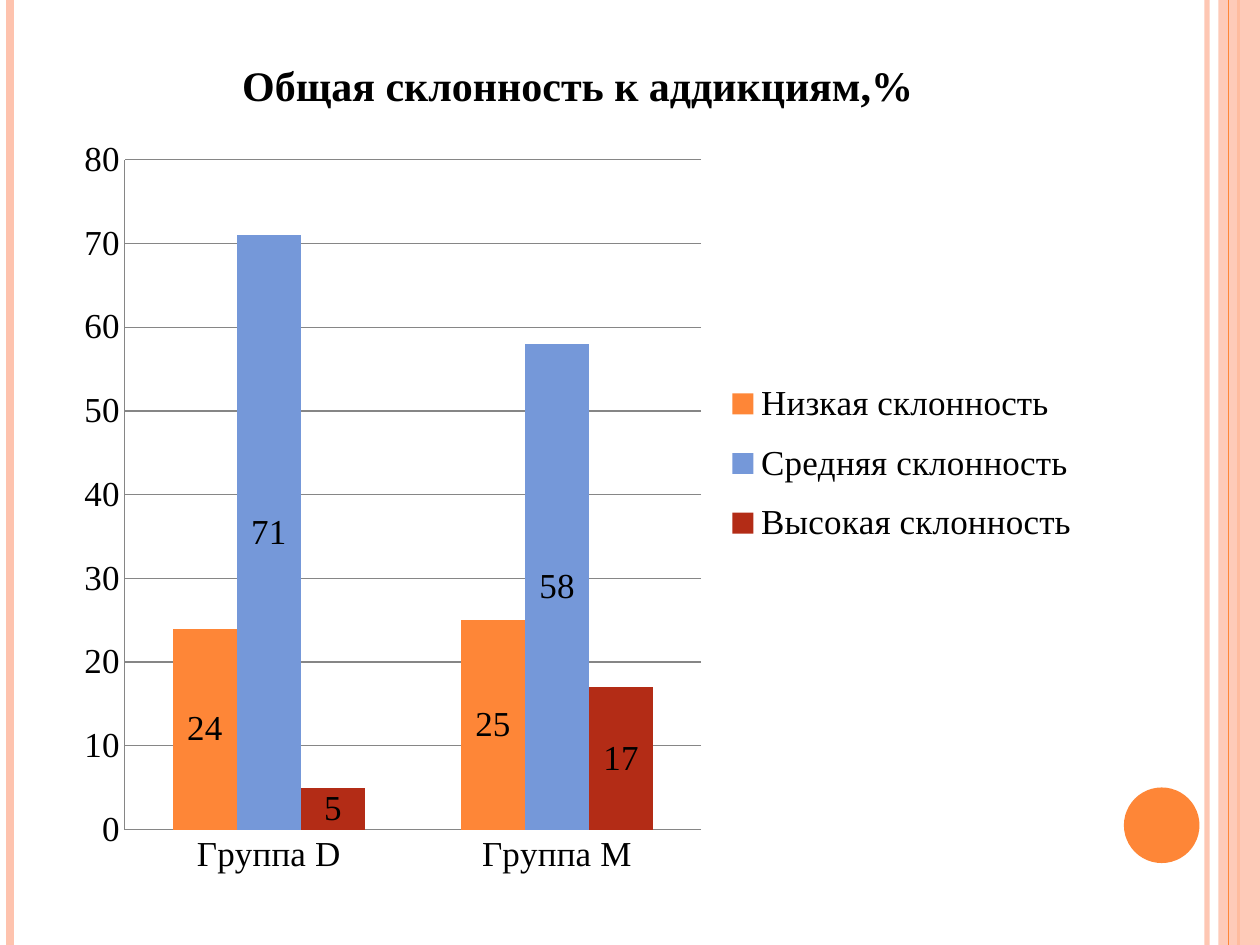
import pptx
import pptx.chart.data
import pptx.dml.color
import pptx.enum.chart
import pptx.enum.shapes
import pptx.oxml
import pptx.oxml.ns
import pptx.util
from pptx.util import Inches, Pt

FONT = "Times New Roman"
COLORS = {
    "orange": "FE8637",
    "peach": "FEC3AE",
    "blue": "7598D9",
    "red": "B32C16",
    "text": "000000",
    "grid": "868686",
}
TITLE = "Общая склонность к аддикциям,%"
GROUPS = ["Группа D", "Группа M"]
LEVELS = [
    ("Низкая склонность", (24, 25), "orange"),
    ("Средняя склонность", (71, 58), "blue"),
    ("Высокая склонность", (5, 17), "red"),
]
# x, colour, width in points, opacity in percent
STRIPES_BEHIND = [(9.58, "peach", 3, 93), (0.08, "peach", 4.5, 100), (9.83, "orange", 1.5, 100)]
STRIPES_FRONT = [(9.75, "orange", 0.75, 100)]
# left, top, width, height as fractions of the chart
PLOT_BOX = (0.06, 0.154, 0.56, 0.774)
LEGEND_BOX = (0.64, 0.39, 0.35, 0.23)


def rgb(name):
    return pptx.dml.color.RGBColor.from_string(COLORS[name])


def set_opacity(element, percent):
    for color in element.iter(pptx.oxml.ns.qn("a:srgbClr")):
        alpha = pptx.oxml.parse_xml(
            f'<a:alpha {pptx.oxml.ns.nsdecls("a")} val="{percent * 1000}"/>')
        color.append(alpha)


def add_stripe(slide, x, color, width, opacity):
    stripe = slide.shapes.add_connector(
        pptx.enum.shapes.MSO_CONNECTOR.STRAIGHT, Inches(x), 0, Inches(x), Inches(7.5))
    stripe.line.color.rgb = rgb(color)
    stripe.line.width = Pt(width)
    properties = stripe._element.spPr
    if opacity < 100:
        set_opacity(properties, opacity)
    properties.append(pptx.oxml.parse_xml(f'<a:effectLst {pptx.oxml.ns.nsdecls("a")}/>'))


def add_plain_shape(slide, kind, box, color, opacity=100):
    shape = slide.shapes.add_shape(kind, *map(Inches, box))
    shape.shadow.inherit = False
    shape.fill.solid()
    shape.fill.fore_color.rgb = rgb(color)
    shape.line.fill.background()
    if opacity < 100:
        set_opacity(shape._element.spPr, opacity)


def format_font(font, size, bold=False, color="text"):
    font.name = FONT
    font.size = Pt(size)
    font.bold = bold
    font.color.rgb = rgb(color)


def write_text(frame, text, **style):
    frame.text = text
    format_font(frame.paragraphs[0].runs[0].font, **style)


def make_layout(box, inner=False):
    """Return a manual chart layout for a box in fractions of the chart."""
    target = '<c:layoutTarget val="inner"/>' if inner else ""
    modes = "".join(f'<c:{side}Mode val="edge"/>' for side in "xy")
    sizes = "".join(f'<c:{side} val="{value}"/>' for side, value in zip("xywh", box))
    return pptx.oxml.parse_xml(
        f'<c:layout {pptx.oxml.ns.nsdecls("c")}><c:manualLayout>'
        f"{target}{modes}{sizes}</c:manualLayout></c:layout>")


def place_part(part, layout, index):
    for old in part.findall(pptx.oxml.ns.qn("c:layout")):
        part.remove(old)
    part.insert(index, layout)


def add_addiction_chart(slide):
    data = pptx.chart.data.CategoryChartData()
    data.categories = GROUPS
    for name, values, _ in LEVELS:
        data.add_series(name, values)
    chart = slide.shapes.add_chart(
        pptx.enum.chart.XL_CHART_TYPE.COLUMN_CLUSTERED,
        Inches(0.5), Inches(0.21), Inches(8.17), Inches(6.87), data).chart
    format_font(chart.font, size=20)
    chart.has_title = True
    write_text(chart.chart_title.text_frame, TITLE, size=24, bold=True)
    chart.chart_title.include_in_layout = False

    chart.has_legend = True
    chart.legend.position = pptx.enum.chart.XL_LEGEND_POSITION.RIGHT
    chart.legend.include_in_layout = False

    chart.value_axis.minimum_scale = 0
    chart.value_axis.maximum_scale = 80
    chart.value_axis.major_unit = 10
    chart.value_axis.has_major_gridlines = True
    for axis in (chart.category_axis, chart.value_axis):
        axis.major_tick_mark = pptx.enum.chart.XL_TICK_MARK.NONE
        axis.format.line.color.rgb = rgb("grid")
    gridlines = chart.value_axis.major_gridlines.format.line
    gridlines.color.rgb = rgb("grid")
    gridlines.width = Pt(0.75)

    plot = chart.plots[0]
    plot.gap_width = 150
    plot.overlap = 0
    plot.vary_by_categories = False
    for series, (_, _, color) in zip(plot.series, LEVELS):
        series.format.fill.solid()
        series.format.fill.fore_color.rgb = rgb(color)
        labels = series.data_labels
        labels.show_value = True
        labels.position = pptx.enum.chart.XL_LABEL_POSITION.CENTER
        format_font(labels.font, size=20)

    plot_area = chart._chartSpace.chart.plotArea
    place_part(plot_area, make_layout(PLOT_BOX, inner=True), 0)
    place_part(chart.legend._element, make_layout(LEGEND_BOX), 1)


def main():
    deck = pptx.Presentation()
    deck.slide_width, deck.slide_height = Inches(10), Inches(7.5)
    slide = deck.slides.add_slide(deck.slide_layouts[6])
    shapes = pptx.enum.shapes.MSO_SHAPE
    for stripe in STRIPES_BEHIND:
        add_stripe(slide, *stripe)
    add_plain_shape(slide, shapes.RECTANGLE, (9.67, 0, 0.33, 7.5), "peach", opacity=87)
    for stripe in STRIPES_FRONT:
        add_stripe(slide, *stripe)
    add_plain_shape(slide, shapes.OVAL, (8.92, 6.25, 0.6, 0.6), "orange")
    add_addiction_chart(slide)
    deck.save("out.pptx")


if __name__ == "__main__":
    main()
